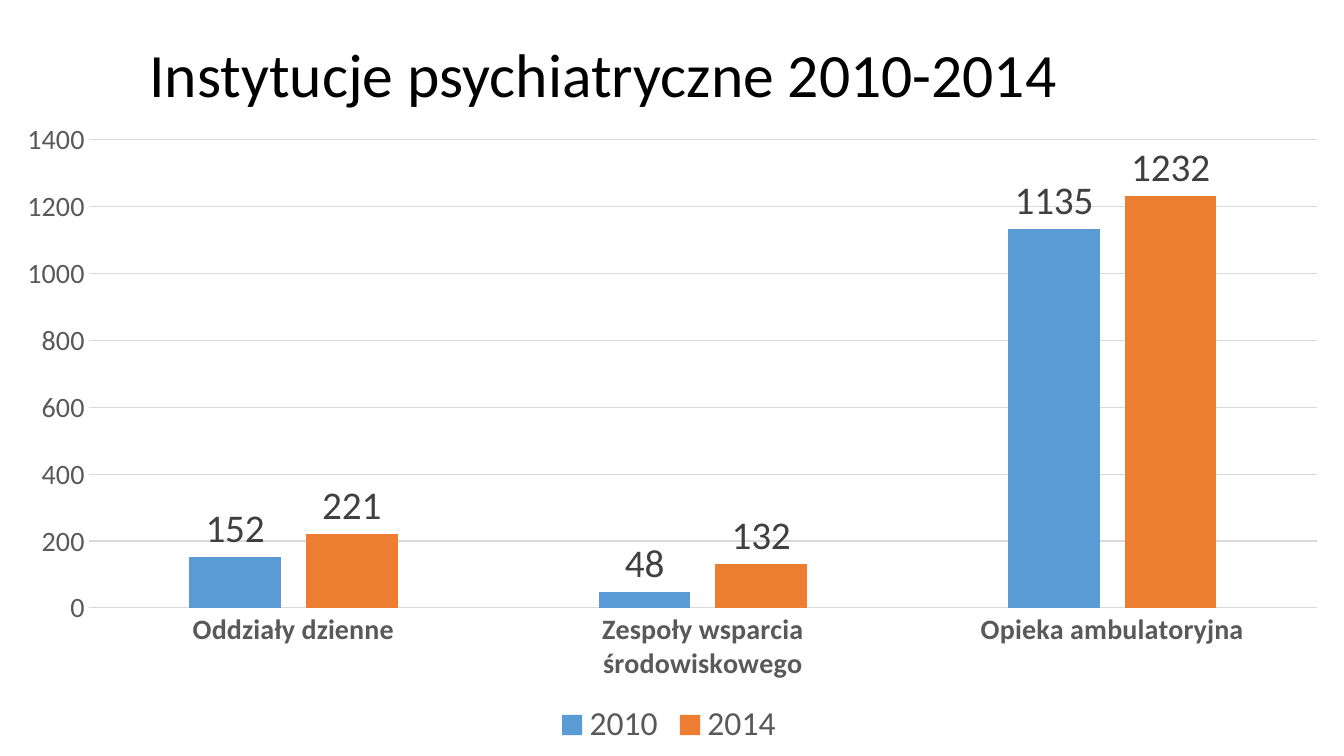
from lxml import etree
from pptx import Presentation
from pptx.chart.data import CategoryChartData
from pptx.dml.color import RGBColor
from pptx.enum.chart import XL_CHART_TYPE, XL_LABEL_POSITION, XL_LEGEND_POSITION, XL_TICK_MARK
from pptx.enum.text import MSO_ANCHOR, PP_ALIGN
from pptx.oxml.ns import qn
from pptx.util import Inches, Pt

CLUSTERED = XL_CHART_TYPE.COLUMN_CLUSTERED
OUTSIDE = XL_LABEL_POSITION.OUTSIDE_END
BOTTOM = XL_LEGEND_POSITION.BOTTOM
NO_TICK = XL_TICK_MARK.NONE
MIDDLE = MSO_ANCHOR.MIDDLE
CENTER = PP_ALIGN.CENTER

WIDTH, HEIGHT = 13.33, 7.5
COLUMNS = ROWS = 12


def color(hex_text):
    return RGBColor.from_string(hex_text)


def place(part, index, **shares):
    """Set a chart part's manual layout, in shares of the chart's size."""
    for old in part.findall(qn("c:layout")):
        part.remove(old)
    layout = etree.Element(qn("c:layout"))
    manual = etree.SubElement(layout, qn("c:manualLayout"))
    if "w" in shares:
        etree.SubElement(manual, qn("c:layoutTarget"), val="inner")
    for axis in "xy":
        etree.SubElement(manual, qn(f"c:{axis}Mode"), val="edge")
    for name, share in shares.items():
        etree.SubElement(manual, qn(f"c:{name}"), val=str(share))
    part.insert(index, layout)


class SlideBuilder:
    FONT = "Calibri"
    TITLE, TEXT, LABEL, GRID = "000000", "595959", "404040", "D9D9D9"

    def __init__(self, prs):
        self.s = prs.slides.add_slide(prs.slide_layouts[6])

    def box(self, col, row, cols, rows):
        dx, dy = WIDTH / COLUMNS, HEIGHT / ROWS
        return Inches(col * dx), Inches(row * dy), Inches(cols * dx), Inches(rows * dy)

    def style(self, font, size, hex_text, bold=False):
        font.name, font.size, font.bold = self.FONT, Pt(size), bold
        font.color.rgb = color(hex_text)

    def rule(self, line):
        line.color.rgb = color(self.GRID)
        line.width = Pt(0.75)

    def title(self, text, *cells):
        tf = self.s.shapes.add_textbox(*self.box(*cells)).text_frame
        tf.word_wrap = True
        tf.vertical_anchor = MIDDLE
        p = tf.paragraphs[0]
        p.alignment = CENTER
        r = p.add_run()
        r.text = text
        self.style(r.font, 44, self.TITLE)

    def column_chart(self, categories, series, *cells):
        data = CategoryChartData()
        data.categories = categories
        for name, values, _ in series:
            data.add_series(name, values)
        chart = self.s.shapes.add_chart(CLUSTERED, *self.box(*cells), data).chart
        chart.has_title = False
        self.style(chart.font, 10, self.TITLE)

        # Columns and their value labels
        plot = chart.plots[0]
        plot.gap_width, plot.overlap = 219, -27
        plot.vary_by_categories = False
        for ser, (_, _, fill) in zip(plot.series, series):
            ser.format.fill.solid()
            ser.format.fill.fore_color.rgb = color(fill)
            labels = ser.data_labels
            labels.show_value = True
            labels.position = OUTSIDE
            self.style(labels.font, 28, self.LABEL)

        # Axes
        for axis, bold in ((chart.category_axis, True), (chart.value_axis, False)):
            axis.major_tick_mark = axis.minor_tick_mark = NO_TICK
            self.style(axis.tick_labels.font, 20, self.TEXT, bold)
        self.rule(chart.category_axis.format.line)
        value_axis = chart.value_axis
        value_axis.minimum_scale, value_axis.maximum_scale = 0, 1400
        value_axis.major_unit = 200
        value_axis.format.line.fill.background()
        self.rule(value_axis.major_gridlines.format.line)

        # Legend and layout
        chart.has_legend = True
        chart.legend.position = BOTTOM
        chart.legend.include_in_layout = False
        self.style(chart.legend.font, 24, self.TEXT)
        place(chart.element.xpath("c:chart/c:plotArea")[0], 0, x=0.066, y=0.047, w=0.914, h=0.724)
        place(chart.element.xpath("c:chart/c:legend")[0], 1, x=0.41, y=0.91)


def main():
    prs = Presentation()
    prs.slide_width, prs.slide_height = Inches(WIDTH), Inches(HEIGHT)
    slide = SlideBuilder(prs)
    slide.title("Instytucje psychiatryczne 2010-2014", 0, 0, 10.78, 2.3)
    slide.column_chart(
        ["Oddziały dzienne", "Zespoły wsparcia środowiskowego", "Opieka ambulatoryjna"],
        [("2010", (152, 48, 1135), "5B9BD5"), ("2014", (221, 132, 1232), "ED7D31")],
        0, 1.74, 12, 10.26,
    )
    prs.save("out.pptx")


if __name__ == "__main__":
    main()
